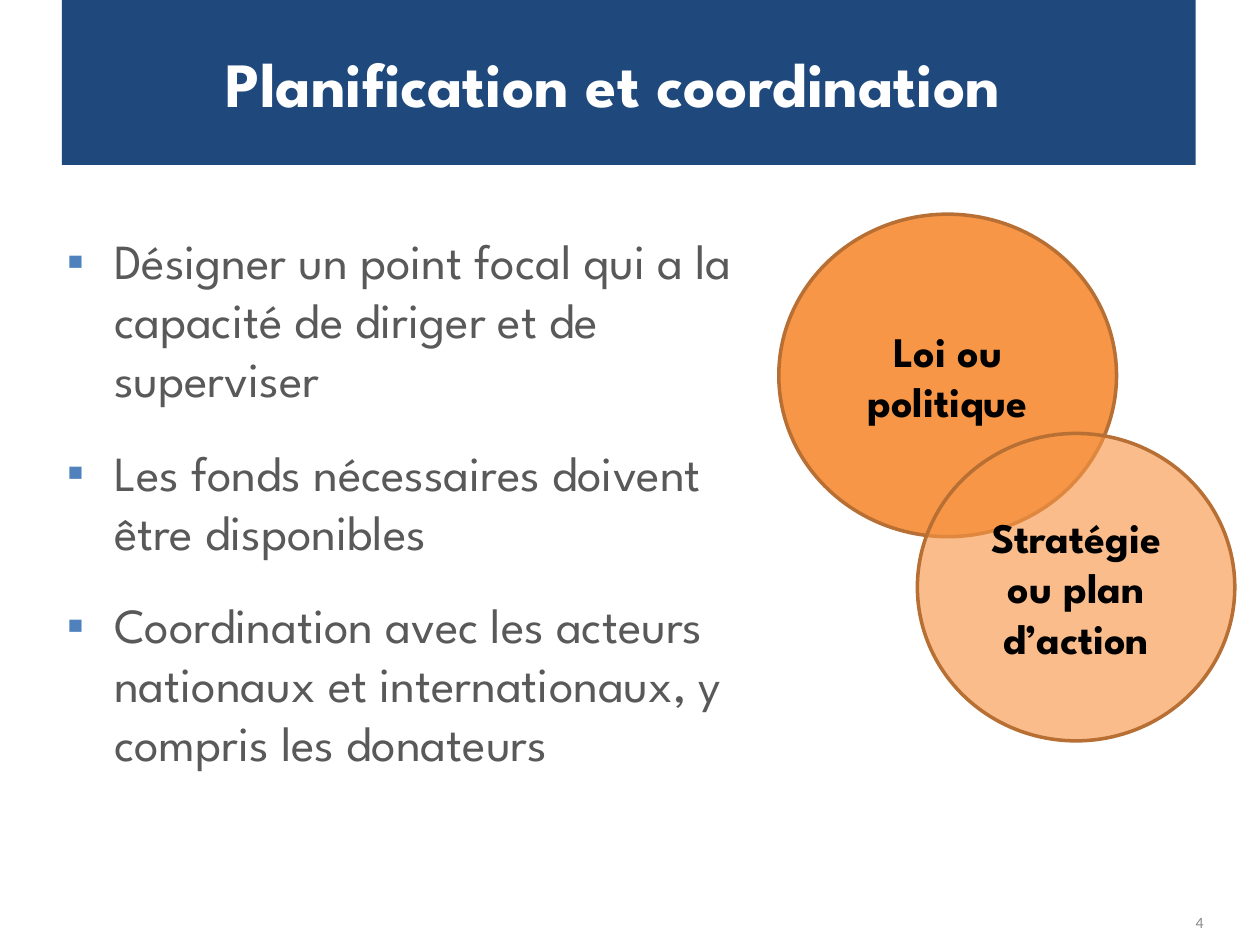
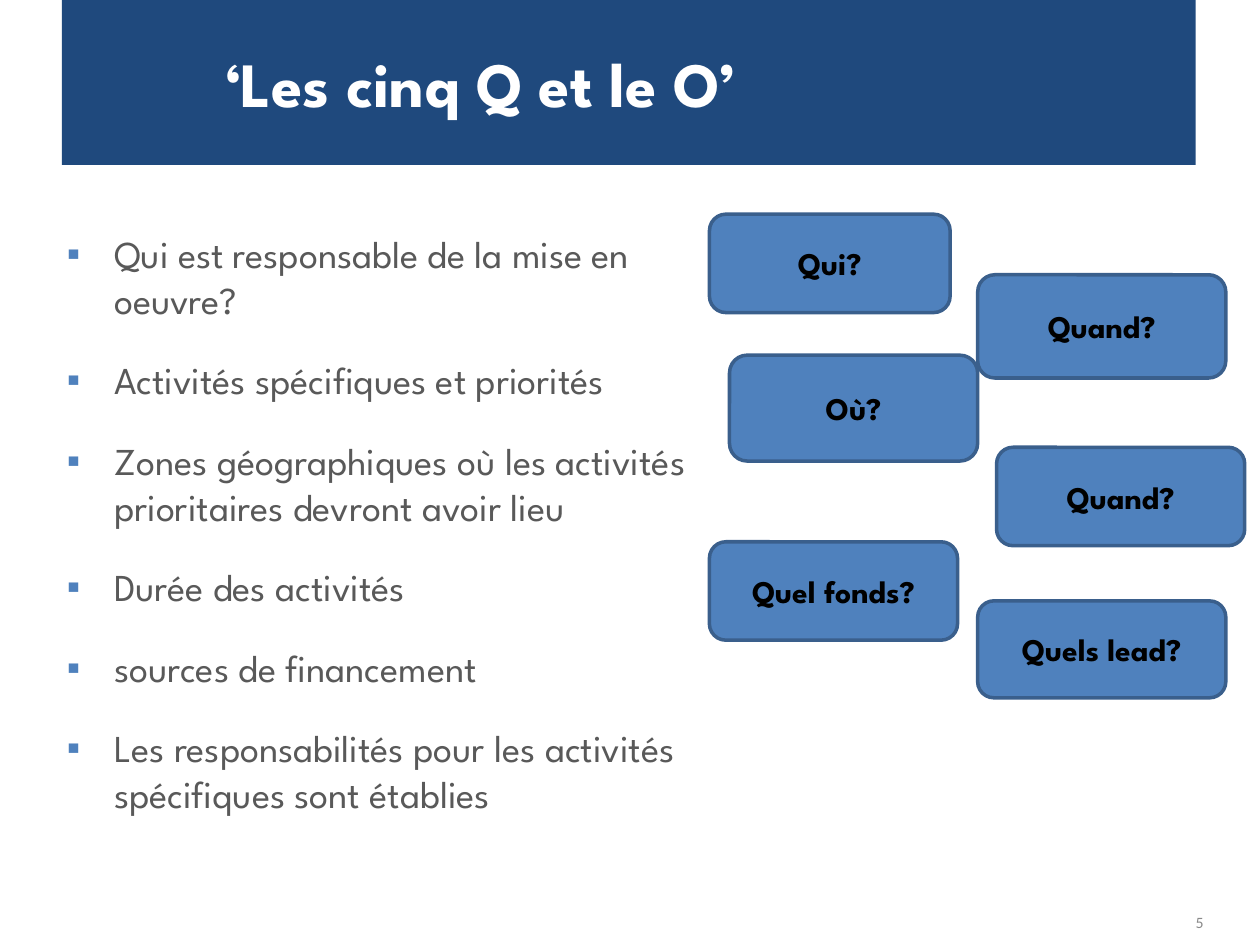
from collections import namedtuple
from lxml import etree
from pptx import Presentation
from pptx.dml.color import RGBColor
from pptx.enum.shapes import MSO_SHAPE
from pptx.enum.text import MSO_ANCHOR, MSO_AUTO_SIZE, PP_ALIGN
from pptx.oxml.ns import qn
from pptx.util import Pt

ELLIPSE, ROUNDED = MSO_SHAPE.OVAL, MSO_SHAPE.ROUNDED_RECTANGLE
MIDDLE, TOP = MSO_ANCHOR.MIDDLE, MSO_ANCHOR.TOP
LEFT, CENTER, RIGHT = PP_ALIGN.LEFT, PP_ALIGN.CENTER, PP_ALIGN.RIGHT
NO_FIT = MSO_AUTO_SIZE.NONE

Theme = namedtuple("Theme", "font number_font band white body number black blue blue_edge "
                            "orange orange_edge title_size number_size gap indent edge")
theme = Theme(font="League Spartan", number_font="Calibri", band="1F497D", white="FFFFFF",
              body="595959", number="898989", black="000000", blue="4F81BD",
              blue_edge="3A5F8C", orange="F79646", orange_edge="B76F34",
              title_size=36, number_size=9, gap=20, indent=27, edge=2)

Bubble = namedtuple("Bubble", "label left top width height opacity", defaults=[100])
Content = namedtuple("Content", "number title points point_size outline fill edge label_size bubbles")
contents = [
    Content(4, "Planification et coordination", [
        "Désigner un point focal qui a la capacité de diriger et de superviser",
        "Les fonds nécessaires doivent être disponibles",
        "Coordination avec les acteurs nationaux et internationaux, y compris les donateurs",
    ], 28, ELLIPSE, theme.orange, theme.orange_edge, 24, [
        Bubble("Loi ou politique", 445, 122.4, 193, 184.3),
        Bubble("Stratégie ou plan d’action", 524.2, 247.7, 181.4, 175.7, 63),
    ]),
    Content(5, "‘Les cinq Q et le O’", [
        "Qui est responsable de la mise en oeuvre?",
        "Activités spécifiques et priorités",
        "Zones géographiques où les activités prioritaires devront avoir lieu",
        "Durée des activités",
        "sources de financement",
        "Les responsabilités pour les activités spécifiques sont établies",
    ], 21.7, ROUNDED, theme.blue, theme.blue_edge, 18, [
        Bubble("Quand?", 558.7, 157, 141.8, 59),
        Bubble("Qui?", 405.4, 122.4, 137.5, 56.2),
        Bubble("Où?", 416.9, 203, 141.8, 60.5),
        Bubble("Quand?", 569.5, 255.6, 141.8, 56.2),
        Bubble("Quel fonds?", 405.4, 309.6, 141.8, 56.2),
        Bubble("Quels lead?", 558.7, 343.4, 141.8, 55.4),
    ]),
]


def place(shape, left, top, width, height):
    shape.left, shape.top, shape.width, shape.height = map(Pt, (left, top, width, height))


def write(paragraph, text, size, color, align, bold=False, font=theme.font):
    paragraph.text = text
    paragraph.alignment = align
    paragraph.font.name = font
    paragraph.font.size = Pt(size)
    paragraph.font.bold = bold
    paragraph.font.color.rgb = RGBColor.from_string(color)


prs = Presentation()
prs.slide_width, prs.slide_height = Pt(720), Pt(540)

for content in contents:
    slide = prs.slides.add_slide(prs.slide_layouts[1])

    number = slide.shapes.add_textbox(Pt(525), Pt(512.6), Pt(167.8), Pt(28.8))
    frame = number.text_frame
    frame.word_wrap = True
    frame.vertical_anchor = MIDDLE
    frame.margin_left = frame.margin_right = Pt(5)
    frame.margin_top = frame.margin_bottom = Pt(3)
    write(frame.paragraphs[0], str(content.number), theme.number_size, theme.number, RIGHT,
          font=theme.number_font)

    title = slide.shapes.title
    place(title, 35.3, 0, 648, 94.3)
    title.fill.solid()
    title.fill.fore_color.rgb = RGBColor.from_string(theme.band)
    frame = title.text_frame
    frame.auto_size = NO_FIT
    frame.vertical_anchor = MIDDLE
    frame.margin_left, frame.margin_right = Pt(93.6), Pt(21.6)
    write(frame.paragraphs[0], content.title, theme.title_size, theme.white, LEFT, bold=True)

    body = slide.placeholders[1]
    place(body, 31, 128.2, 396.7, 351.4)
    frame = body.text_frame
    frame.auto_size = NO_FIT
    frame.vertical_anchor = TOP
    for index, point in enumerate(content.points):
        paragraph = frame.add_paragraph() if index else frame.paragraphs[0]
        paragraph.space_before = Pt(theme.gap if index else 0)
        properties = paragraph._p.get_or_add_pPr()
        properties.set("marL", str(Pt(theme.indent)))
        properties.set("indent", str(-Pt(theme.indent)))
        bullet_color = etree.SubElement(properties, qn("a:buClr"))
        etree.SubElement(bullet_color, qn("a:srgbClr"), val=theme.blue)
        etree.SubElement(properties, qn("a:buFont"), typeface="Arial")
        etree.SubElement(properties, qn("a:buChar"), char="▪")
        write(paragraph, point, content.point_size, theme.body, LEFT)

    for bubble in content.bubbles:
        outline = slide.shapes.add_shape(
            content.outline, *map(Pt, (bubble.left, bubble.top, bubble.width, bubble.height)))
        outline.shadow.inherit = False
        outline.fill.solid()
        outline.fill.fore_color.rgb = RGBColor.from_string(content.fill)
        if bubble.opacity < 100:
            fill_color = outline._element.spPr.find(qn("a:solidFill")).find(qn("a:srgbClr"))
            etree.SubElement(fill_color, qn("a:alpha"), val=str(bubble.opacity * 1000))
        outline.line.color.rgb = RGBColor.from_string(content.edge)
        outline.line.width = Pt(theme.edge)
        frame = outline.text_frame
        frame.word_wrap = True
        frame.vertical_anchor = MIDDLE
        write(frame.paragraphs[0], bubble.label, content.label_size, theme.black, CENTER, bold=True)

prs.save("out.pptx")
